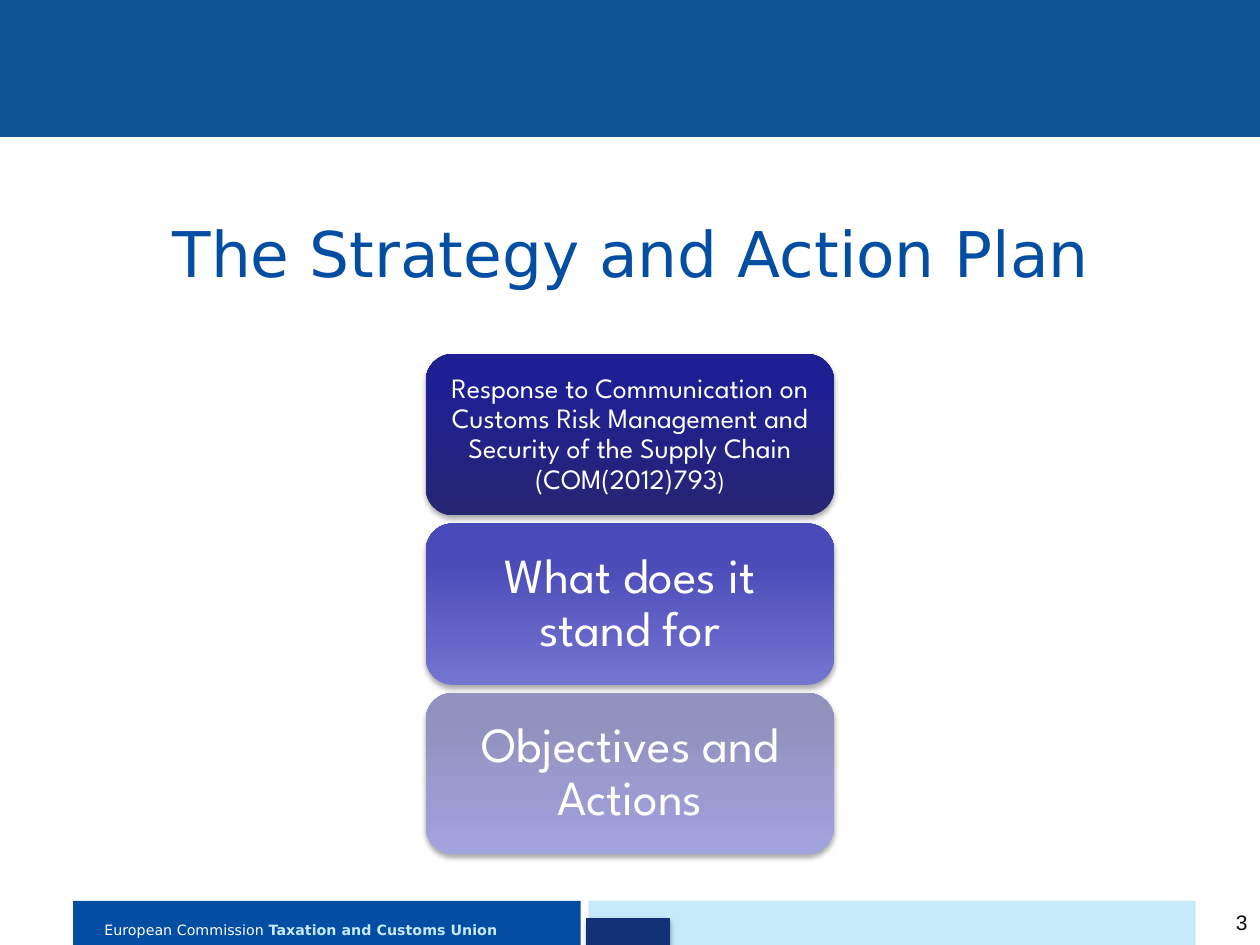
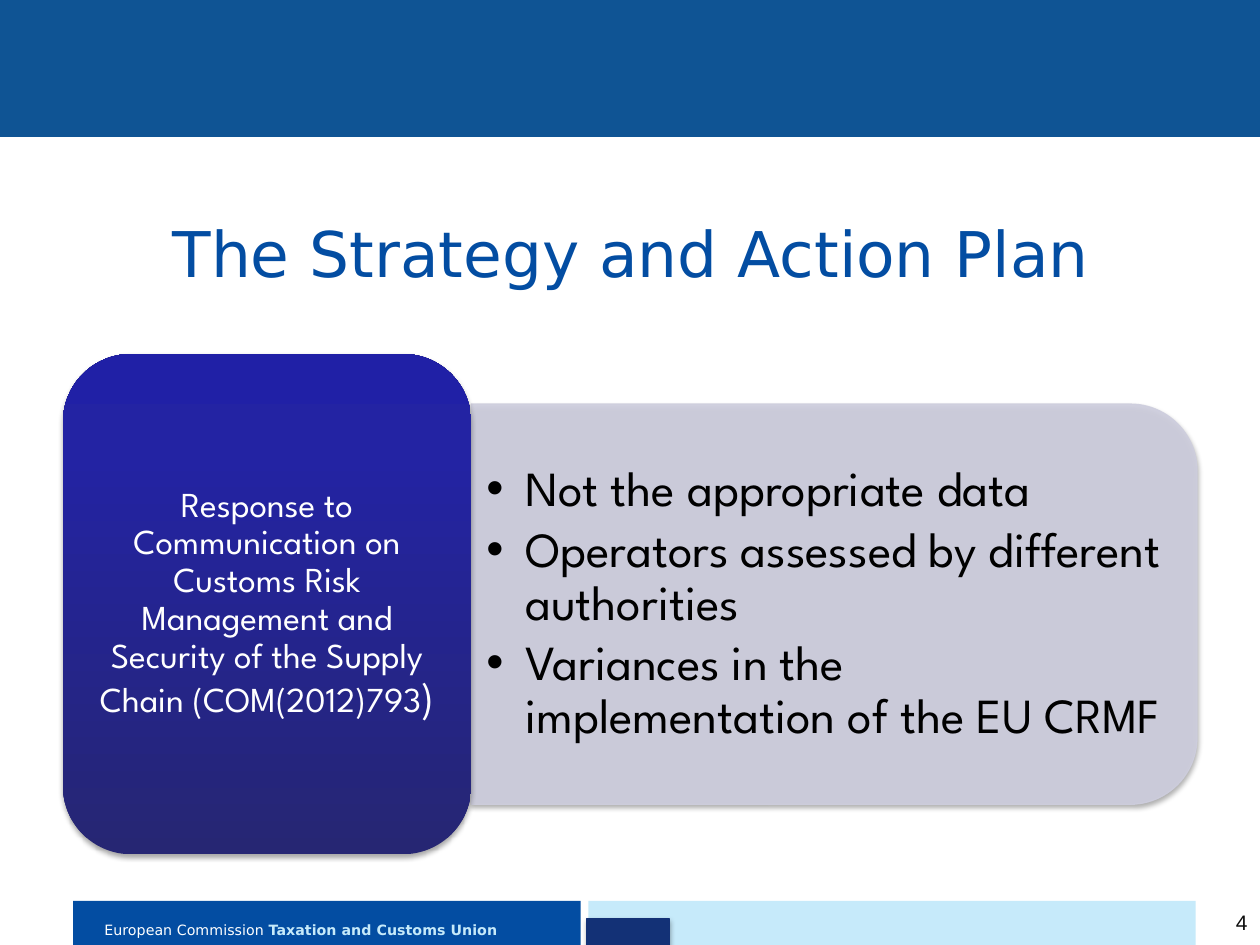
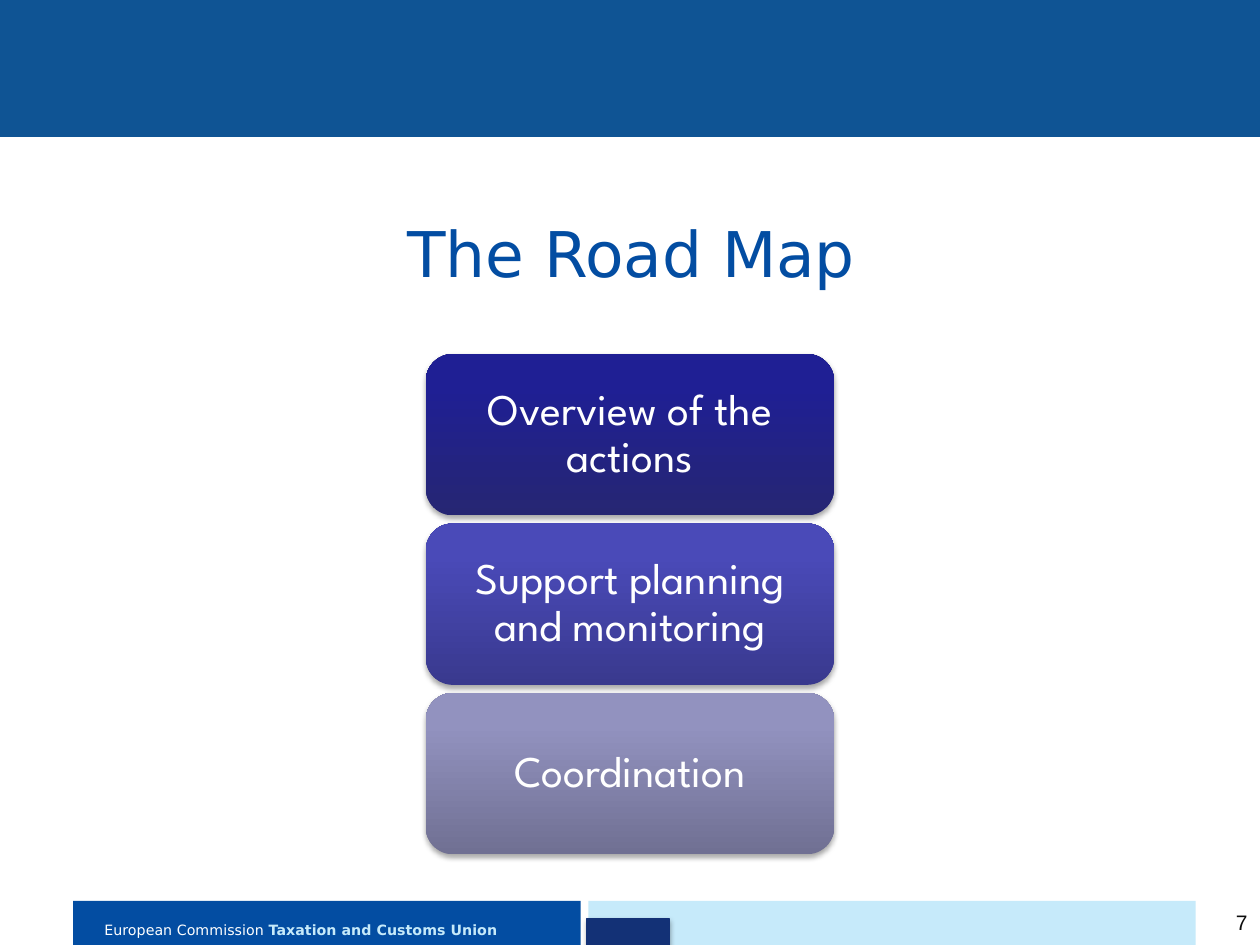
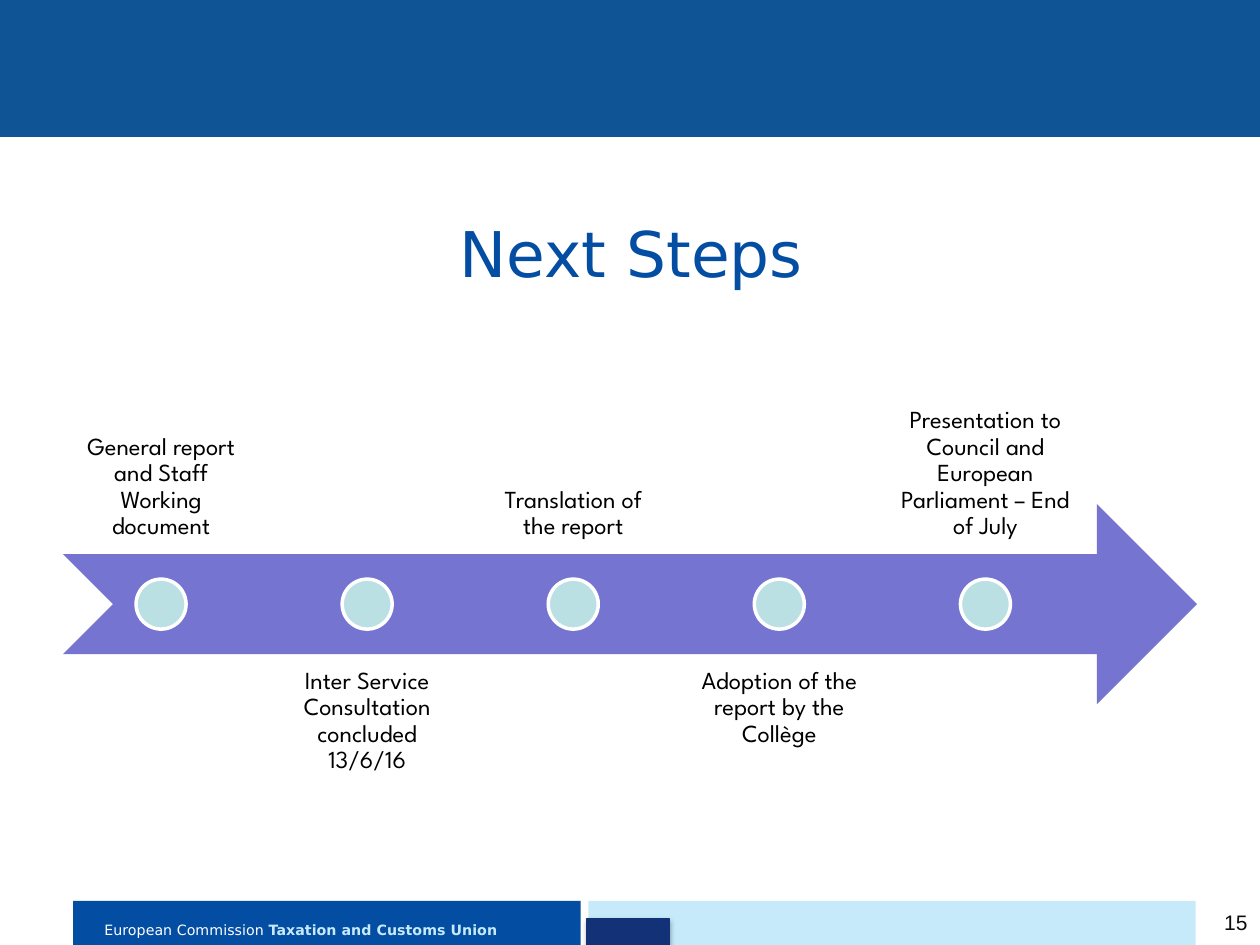
from copy import deepcopy
from dataclasses import dataclass
from typing import Optional

from lxml import etree
from pptx import Presentation
from pptx.dml.color import RGBColor
from pptx.enum.shapes import MSO_SHAPE
from pptx.enum.text import MSO_ANCHOR, MSO_AUTO_SIZE, PP_ALIGN
from pptx.oxml.ns import qn
from pptx.util import Inches, Pt

RECT, ROUNDED, OVAL = MSO_SHAPE.RECTANGLE, MSO_SHAPE.ROUNDED_RECTANGLE, MSO_SHAPE.OVAL
TAB_PANEL, ARROW = MSO_SHAPE.ROUND_2_SAME_RECTANGLE, MSO_SHAPE.NOTCHED_RIGHT_ARROW
TOP, MIDDLE, BOTTOM = MSO_ANCHOR.TOP, MSO_ANCHOR.MIDDLE, MSO_ANCHOR.BOTTOM
LEFT, CENTER, RIGHT = PP_ALIGN.LEFT, PP_ALIGN.CENTER, PP_ALIGN.RIGHT
NO_FIT, GROW = MSO_AUTO_SIZE.NONE, MSO_AUTO_SIZE.SHAPE_TO_FIT_TEXT

COLUMNS, ROWS = 100, 75
CELL = Inches(0.1)
TITLE_FONT, BODY_FONT, NUMBER_FONT = "DejaVu Sans", "League Spartan", "Arial"
TITLE_ONLY, TITLE_AND_BODY = 5, 1

COLORS = {
    "white": "FFFFFF", "black": "000000", "number": "0D0D0D",
    "blue": "034DA2", "sky": "C6EAFA", "band": "0F5494", "tab": "133176",
    "panel": "CECEDE", "arrow": "7575D1", "dot": "BBE0E3",
}
# Gradient stops from the bottom edge (0, 80 and 100 per cent)
GRADIENTS = {
    "navy": ("262673", "1F1F94", "1D1D97"),
    "royal": ("262673", "2323A3", "2020A6"),
    "violet": ("7575D1", "4A4AB8", "4848BB"),
    "violet dark": ("39398E", "4A4AB8", "4848BB"),
    "lilac": ("A3A3E0", "9292BF", "9191C0"),
    "lilac dark": ("707093", "9292BF", "9191C0"),
}


@dataclass(frozen=True)
class Box:
    """A place on the grid, in columns and rows."""
    left: float
    top: float
    width: float
    height: float

    def lengths(self) -> tuple:
        return tuple(round(side * CELL)
                     for side in (self.left, self.top, self.width, self.height))


@dataclass(frozen=True)
class Card:
    text: str
    gradient: str
    size: float
    inset: float
    ending: str = ""
    ending_size: Optional[float] = None


CONTENT = Box(5, 28.1, 90, 39.7)
RESPONSE = ("Response to Communication on Customs Risk Management and "
            "Security of the Supply Chain (COM(2012)793")


# Formatting helpers
def color(name: str) -> RGBColor:
    return RGBColor.from_string(COLORS[name])


def set_font(target, name: str, size: float, color_name: str) -> None:
    target.font.name = name
    target.font.size = Pt(size)
    target.font.color.rgb = color(color_name)


def set_frame(frame, anchor, inset_x: float, inset_y: float, fit=NO_FIT) -> None:
    frame.word_wrap = True
    frame.auto_size = fit
    frame.vertical_anchor = anchor
    frame.margin_left = frame.margin_right = Inches(inset_x)
    frame.margin_top = frame.margin_bottom = Inches(inset_y)


def add_shadow(shape) -> None:
    effects = shape._element.spPr.find(qn("a:effectLst"))
    shadow = etree.SubElement(effects, qn("a:outerShdw"), blurRad=str(Pt(3.1)),
                              dist=str(Pt(1.8)), dir="5400000", rotWithShape="0")
    black = etree.SubElement(shadow, qn("a:srgbClr"), val=COLORS["black"])
    etree.SubElement(black, qn("a:alpha"), val="35000")


def add_figure(page, kind, box: Box, fill: Optional[str] = None,
               line: Optional[str] = None, width: float = 0.75, shadow: bool = False):
    shape = page.shapes.add_shape(kind, *box.lengths())
    shape.shadow.inherit = False
    if fill:
        shape.fill.solid()
        shape.fill.fore_color.rgb = color(fill)
    if line:
        shape.line.color.rgb = color(line)
        shape.line.width = Pt(width)
    else:
        shape.line.fill.background()
    if shadow:
        add_shadow(shape)
    return shape


def fill_gradient(shape, name: str) -> None:
    shape.fill.gradient()
    shape.fill.gradient_angle = 90
    stops = shape._element.spPr.find(".//" + qn("a:gsLst"))
    stops.insert(1, deepcopy(stops[0]))
    for stop, position, value in zip(shape.fill.gradient_stops, (0, 0.8, 1), GRADIENTS[name]):
        stop.position = position
        stop.color.rgb = RGBColor.from_string(value)


def add_text(page, box: Box, text: str, font: tuple, align=LEFT, anchor=TOP,
             inset_x: float = 0.1, inset_y: float = 0.05, fit=NO_FIT):
    frame = page.shapes.add_textbox(*box.lengths()).text_frame
    set_frame(frame, anchor, inset_x, inset_y, fit)
    para = frame.paragraphs[0]
    para.alignment = align
    set_font(para, *font)
    para.add_run().text = text
    return para


# Parts shared by all slides
def start_page(deck, title: str, number: int, layout: int = TITLE_ONLY):
    page = deck.slides.add_slide(deck.slide_layouts[layout])
    add_figure(page, RECT, Box(46.7, 71.5, 48.2, 3.5), "sky")
    add_text(page, Box(95.8, 71.7, 4.2, 3.3), str(number),
             (NUMBER_FONT, 12, "number"), RIGHT)
    add_figure(page, RECT, Box(5.8, 71.5, 40.3, 3.5), "blue")
    footer = add_text(page, Box(7.3, 72.4, 38.5, 2.6), "European Commission ",
                      (TITLE_FONT, 14, "white"), fit=GROW)
    union = footer.add_run()
    union.text = "Taxation and Customs Union"
    union.font.bold = True
    union.font.color.rgb = color("sky")
    for span in footer.runs:
        span._r.get_or_add_rPr().set("baseline", "30000")
    add_figure(page, RECT, Box(0, 0, COLUMNS, 10.8), "band", "band")
    add_figure(page, RECT, Box(46.6, 72.9, 6.5, 2.2), "tab", "tab", shadow=True)

    heading = page.shapes.title
    heading.left, heading.top, heading.width, heading.height = Box(5.1, 17, 90, 10.2).lengths()
    set_frame(heading.text_frame, TOP, 0, 0)
    heading.text_frame.text = title
    para = heading.text_frame.paragraphs[0]
    para.alignment = CENTER
    set_font(para, TITLE_FONT, 36, "blue")
    return page


def add_card(page, box: Box, card: Card) -> None:
    shape = add_figure(page, ROUNDED, box, shadow=True)
    fill_gradient(shape, card.gradient)
    set_frame(shape.text_frame, MIDDLE, card.inset, card.inset / 2)
    para = shape.text_frame.paragraphs[0]
    para.alignment = CENTER
    para.line_spacing = 0.9
    set_font(para, BODY_FONT, card.size, "white")
    para.add_run().text = card.text
    if card.ending:
        ending = para.add_run()
        ending.text = card.ending
        ending.font.size = Pt(card.ending_size)


def add_card_stack(page, cards: list) -> None:
    """Stack cards in the content area, with gaps of 5% of a card."""
    height = CONTENT.height / (len(cards) + 0.05 * (len(cards) - 1))
    width = 0.36 * CONTENT.width
    left = CONTENT.left + (CONTENT.width - width) / 2
    for index, card in enumerate(cards):
        add_card(page, Box(left, CONTENT.top + 1.05 * height * index, width, height), card)


def add_bullet_panel(page, items: list, card: Card) -> None:
    """A card on the left, with a list on a panel beside it."""
    card_width = 0.36 * CONTENT.width
    left, width = CONTENT.left + card_width, CONTENT.width - card_width
    height = 0.8 * CONTENT.height
    middle = CONTENT.top + CONTENT.height / 2
    # The panel is turned by 90 degrees, so its sides swap
    panel = add_figure(page, TAB_PANEL, Box(left + (width - height) / 2, middle - width / 2,
                                            height, width), "panel", "panel", shadow=True)
    panel.rotation = 90
    for paint in panel._element.spPr.findall(".//" + qn("a:solidFill")):
        etree.SubElement(paint[0], qn("a:alpha"), val="90000")

    body = page.placeholders[1]
    page.shapes._spTree.append(body._element)
    body.left, body.top, body.width, body.height = Box(left, middle - 14.35, 56, 28.7).lengths()
    frame = body.text_frame
    set_frame(frame, MIDDLE, 0.12, 0.06)
    frame.text = "\n".join(items)
    for para in frame.paragraphs:
        para.level = 1
        props = para._p.get_or_add_pPr()
        props.set("marL", str(Inches(0.31)))
        props.set("indent", str(-Inches(0.31)))
        etree.SubElement(props, qn("a:buChar"), char="•")
        para.alignment = LEFT
        para.line_spacing = 0.9
        para.space_before = Pt(0)
        para.space_after = Pt(4.2)
        set_font(para, BODY_FONT, 28, "black")
    add_card(page, Box(CONTENT.left, CONTENT.top, card_width, CONTENT.height), card)


def add_timeline(page, steps: list) -> None:
    """An arrow with dots; labels alternate above and below it."""
    band = 0.4 * CONTENT.height
    arrow_top = CONTENT.top + 0.3 * CONTENT.height
    add_figure(page, ARROW, Box(CONTENT.left, arrow_top, CONTENT.width, band), "arrow")
    width = 0.9 * CONTENT.width / (len(steps) + 0.05 * (len(steps) - 1))
    dot = band / 4
    for index, step in enumerate(steps):
        left = CONTENT.left + 1.05 * width * index
        above = index % 2 == 0
        top = CONTENT.top if above else CONTENT.top + CONTENT.height - band
        label = add_text(page, Box(left, top, width, band), step, (BODY_FONT, 14, "black"),
                         CENTER, BOTTOM if above else TOP, 0.11, 0.11)
        label.line_spacing = 0.9
        add_figure(page, OVAL, Box(left + (width - dot) / 2, arrow_top + (band - dot) / 2,
                                   dot, dot), "dot", "white", 2)


def main() -> None:
    deck = Presentation()
    deck.slide_width, deck.slide_height = COLUMNS * CELL, ROWS * CELL

    # Strategy and action plan: contents
    page = start_page(deck, "The Strategy and Action Plan", 3)
    add_card_stack(page, [
        Card(RESPONSE, "navy", 16, 0.07, ")", 14),
        Card("What does it stand for", "violet", 28, 0.12),
        Card("Objectives and Actions", "lilac", 28, 0.12),
    ])

    # Strategy and action plan: findings
    page = start_page(deck, "The Strategy and Action Plan", 4, TITLE_AND_BODY)
    add_bullet_panel(page, [
        "Not the appropriate data",
        "Operators assessed by different authorities",
        "Variances in the implementation of the EU CRMF",
    ], Card(RESPONSE, "royal", 20, 0.08, ")", 24))

    # Road map
    page = start_page(deck, "The Road Map", 7)
    add_card_stack(page, [
        Card("Overview of the actions", "navy", 25, 0.1),
        Card("Support planning and monitoring", "violet dark", 25, 0.1),
        Card("Coordination", "lilac dark", 25, 0.1),
    ])

    # Next steps
    page = start_page(deck, "Next Steps", 15)
    add_timeline(page, [
        "General report and Staff Working document",
        "Inter Service Consultation concluded 13/6/16",
        "Translation of the report",
        "Adoption of the report by the Collège",
        "Presentation to Council and European Parliament – End of July",
    ])

    deck.save("out.pptx")


if __name__ == "__main__":
    main()
